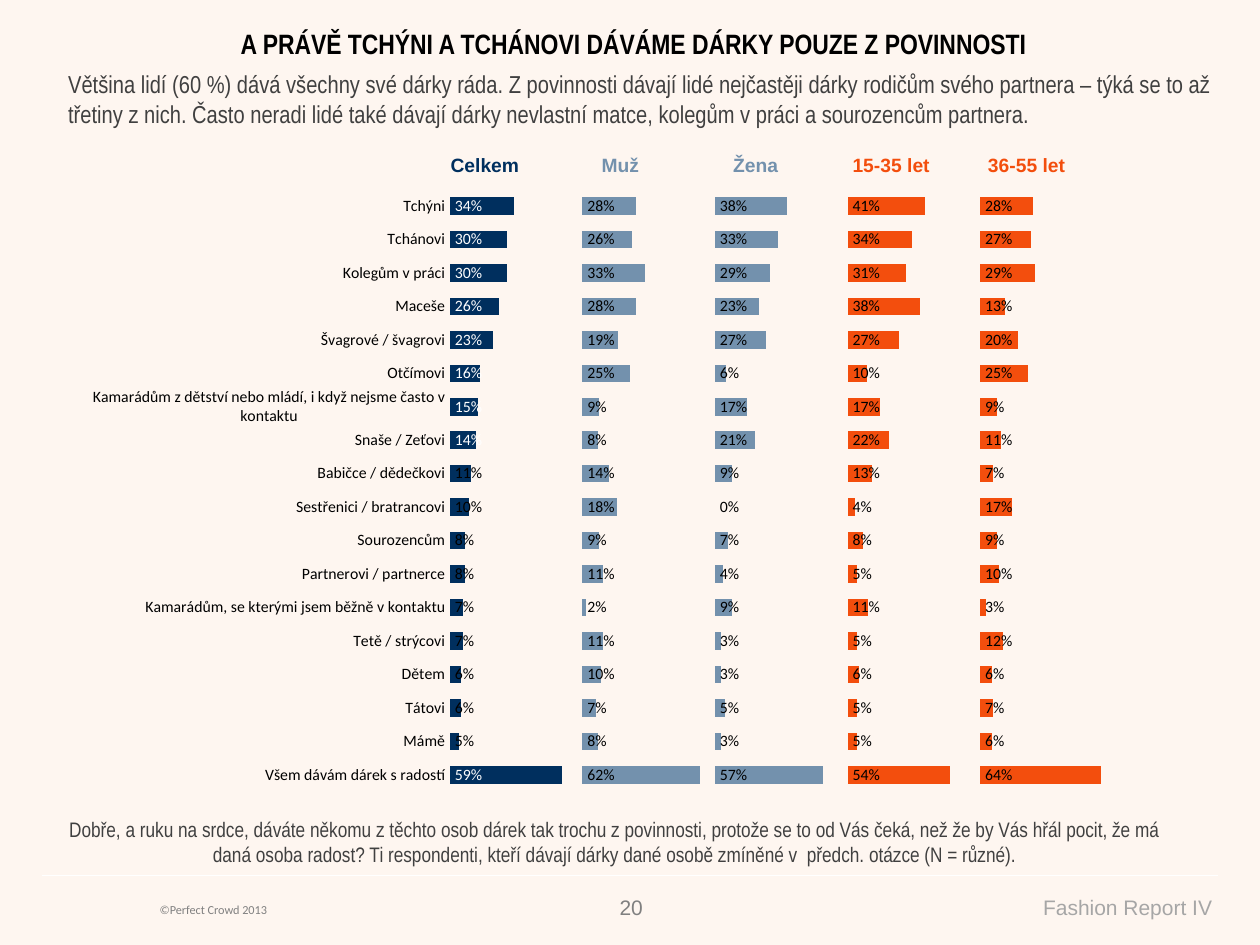
import pptx
import pptx.chart.data
import pptx.dml.color
import pptx.enum.chart
import pptx.enum.shapes
import pptx.enum.text
import pptx.oxml
import pptx.oxml.ns
import pptx.util
from pptx.util import Cm, Pt

ALIGN = pptx.enum.text.PP_ALIGN
ANCHOR = pptx.enum.text.MSO_ANCHOR
NAVY, STEEL, ORANGE = "002F5E", "7391AD", "F34E0D"

# Content
TITLE = "A PRÁVĚ TCHÝNI A TCHÁNOVI DÁVÁME DÁRKY POUZE Z POVINNOSTI"
SUMMARY = (
    "Většina lidí (60 %) dává všechny své dárky ráda. Z povinnosti dávají lidé "
    "nejčastěji dárky rodičům svého partnera – týká se to až třetiny z nich. Často "
    "neradi lidé také dávají dárky nevlastní matce, kolegům v práci a sourozencům partnera."
)
QUESTION = (
    "Dobře, a ruku na srdce, dáváte někomu z těchto osob dárek tak trochu z povinnosti, "
    "protože se to od Vás čeká, než že by Vás hřál pocit, že má daná osoba radost? "
    "Ti respondenti, kteří dávají dárky dané osobě zmíněné v  předch. otázce (N = různé)."
)
RECIPIENTS = [
    "Tchýni", "Tchánovi", "Kolegům v práci", "Maceše", "Švagrové / švagrovi", "Otčímovi",
    "Kamarádům z dětství nebo mládí, i když nejsme často v kontaktu", "Snaše / Zeťovi",
    "Babičce / dědečkovi", "Sestřenici / bratrancovi", "Sourozencům",
    "Partnerovi / partnerce", "Kamarádům, se kterými jsem běžně v kontaktu",
    "Tetě / strýcovi", "Dětem", "Tátovi", "Mámě", "Všem dávám dárek s radostí",
]
GROUPS = [  # heading, colour, percentages
    ("Celkem", NAVY, [34, 30, 30, 26, 23, 16, 15, 14, 11, 10, 8, 8, 7, 7, 6, 6, 5, 59]),
    ("Muž", STEEL, [28, 26, 33, 28, 19, 25, 9, 8, 14, 18, 9, 11, 2, 11, 10, 7, 8, 62]),
    ("Žena", STEEL, [38, 33, 29, 23, 27, 6, 17, 21, 9, 0, 7, 4, 9, 3, 3, 5, 3, 57]),
    ("15-35 let", ORANGE, [41, 34, 31, 38, 27, 10, 17, 22, 13, 4, 8, 5, 11, 5, 6, 5, 5, 54]),
    ("36-55 let", ORANGE, [28, 27, 29, 13, 20, 25, 9, 11, 7, 17, 9, 10, 3, 12, 6, 7, 6, 64]),
]
WHITE_LABELS = [*range(8), 17]  # rows of the first group
COLUMN_PITCH = 70  # percentage points from one group's base to the next
AXIS_MAXIMUM = 4
PLOT_LAYOUT = {"x": 0.332, "y": 0.069, "w": 0.663, "h": 0.889}

FOOTER = [  # text, box in cm, format, alignment
    ("©Perfect Crowd 2013", (2.97, 18.06, 7.39, 0.56),
     {"size": Pt(7), "name": "Calibri"}, "808080", ALIGN.LEFT),
    ("Fashion Report IV", (15.27, 17.91, 9.42, 0.76),
     {"size": Pt(12), "name": "Arial"}, "A6A6A6", ALIGN.RIGHT),
    ("20", (12.17, 17.91, 1.04, 0.76),
     {"size": Pt(12), "name": "Arial"}, "808080", ALIGN.RIGHT),
]


def rgb(code):
    return pptx.dml.color.RGBColor.from_string(code)


def style(font, values, color):
    for name, value in values.items():
        setattr(font, name, value)
    font.color.rgb = rgb(color)


def write(frame, text, values, color, align, anchor=ANCHOR.TOP):
    frame.word_wrap = True
    frame.vertical_anchor = anchor
    para = frame.paragraphs[0]
    para.alignment = align
    para.space_before = Pt(0)
    span = para.add_run()
    span.text = text
    style(span.font, values, color)
    return para


def place(shape, area):
    for name, value in zip(("left", "top", "width", "height"), area):
        setattr(shape, name, Cm(value))


def add_text(page, text, area, values, color, align):
    box = page.shapes.add_textbox(*map(Cm, area))
    write(box.text_frame, text, values, color, align)


def add_headings(page):
    frame = page.shapes.add_table(1, len(GROUPS), Cm(8.41), Cm(3.07), Cm(13.65), Cm(0.56))
    table = frame.table
    table.first_row = table.horz_banding = False
    style_id = table._tbl.tblPr.find(pptx.oxml.ns.qn("a:tableStyleId"))
    style_id.text = "{2D5ABB26-0587-4C30-8999-92F81FD0307C}"
    for cell, (heading, color, _) in zip(table.iter_cells(), GROUPS):
        cell.fill.background()
        for side in ("left", "top", "right", "bottom"):
            setattr(cell, "margin_" + side, 0)
        cell.vertical_anchor = ANCHOR.MIDDLE
        para = cell.text_frame.paragraphs[0]
        para.alignment = ALIGN.CENTER
        span = para.add_run()
        span.text = heading
        style(span.font, {"size": Pt(11), "name": "Arial", "bold": True}, color)


def add_bars(page):
    # Each group is followed by an invisible spacer that fills its column
    data = pptx.chart.data.CategoryChartData(number_format="0%")
    data.categories = RECIPIENTS
    colors = []
    for heading, color, values in GROUPS:
        data.add_series(heading, [value / 100 for value in values])
        colors.append(color)
        if heading != GROUPS[-1][0]:
            data.add_series("Mezera " + heading,
                            [(COLUMN_PITCH - value) / 100 for value in values])
            colors.append(None)
    chart = page.shapes.add_chart(
        pptx.enum.chart.XL_CHART_TYPE.BAR_STACKED,
        Cm(1.42), Cm(2.87), Cm(23.04), Cm(13.67), data).chart
    chart.has_legend = chart.has_title = False
    style(chart.font, {"size": Pt(9), "name": "Calibri"}, "000000")

    # Axes
    category, value = chart.category_axis, chart.value_axis
    category.reverse_order = True
    category.format.line.fill.background()
    category.major_tick_mark = pptx.enum.chart.XL_TICK_MARK.NONE
    value.minimum_scale, value.maximum_scale = 0, AXIS_MAXIMUM
    value.has_major_gridlines = value.visible = False

    # Bars and their labels
    plot = chart.plots[0]
    plot.gap_width, plot.overlap, plot.vary_by_categories = 91, 100, False
    inside_base = pptx.enum.chart.XL_LABEL_POSITION.INSIDE_BASE
    for series, color in zip(plot.series, colors):
        if color is None:
            series.format.fill.background()
            continue
        series.format.fill.solid()
        series.format.fill.fore_color.rgb = rgb(color)
        labels = series.data_labels
        labels.show_value = True
        labels.number_format, labels.number_format_is_linked = "0%", False
        labels.position = inside_base
        style(labels.font, {"size": Pt(9), "name": "Calibri"}, "000000")
    for row in WHITE_LABELS:
        label = plot.series[0].points[row].data_label
        style(label.font, {"size": Pt(9), "name": "Calibri"}, "FFFFFF")
        label.position = inside_base

    # Fixed inner plot area
    area = chart._chartSpace.chart.plotArea
    for old in area.findall(pptx.oxml.ns.qn("c:layout")):
        area.remove(old)
    parts = "".join(f'<c:{key}Mode val="edge"/>' for key in "xy")
    parts += "".join(f'<c:{key} val="{size}"/>' for key, size in PLOT_LAYOUT.items())
    area.insert(0, pptx.oxml.parse_xml(
        f'<c:layout {pptx.oxml.ns.nsdecls("c")}><c:manualLayout>'
        f'<c:layoutTarget val="inner"/>{parts}</c:manualLayout></c:layout>'))


def main():
    deck = pptx.Presentation()
    deck.slide_width, deck.slide_height = Cm(25.4), Cm(19.05)
    page = deck.slides.add_slide(deck.slide_layouts[1])
    page.background.fill.solid()
    page.background.fill.fore_color.rgb = rgb("FEF6F0")

    # Title and summary
    title, body = page.shapes.title, page.placeholders[1]
    place(title, (1.42, 0.41, 22.71, 0.94))
    write(title.text_frame, TITLE, {"size": Pt(16), "name": "Arial Narrow", "bold": True},
          "000000", ALIGN.CENTER, ANCHOR.MIDDLE)
    place(body, (1.12, 1.27, 23.77, 2.26))
    para = write(body.text_frame, SUMMARY, {"size": Pt(14), "name": "Arial Narrow"},
                 "404040", ALIGN.LEFT)
    properties = para._p.get_or_add_pPr()
    properties.set("marL", "0")
    properties.set("indent", "0")
    properties.append(pptx.oxml.parse_xml(f'<a:buNone {pptx.oxml.ns.nsdecls("a")}/>'))
    for shape in (title, body):
        shape.text_frame.auto_size = pptx.enum.text.MSO_AUTO_SIZE.NONE

    # Footer
    rule = page.shapes.add_connector(pptx.enum.shapes.MSO_CONNECTOR.STRAIGHT,
                                     Cm(0.84), Cm(17.65), Cm(24.56), Cm(17.65))
    rule.line.color.rgb = rgb("FFFFFF")
    rule.line.width = Pt(0.75)
    rule._element.spPr.append(
        pptx.oxml.parse_xml(f'<a:effectLst {pptx.oxml.ns.nsdecls("a")}/>'))
    for item in FOOTER:
        add_text(page, *item)

    # Survey question, column headings and bars
    add_text(page, QUESTION, (0.89, 16.33, 23.01, 1.27),
             {"size": Pt(12), "name": "Arial Narrow"}, "404040", ALIGN.CENTER)
    add_headings(page)
    add_bars(page)
    deck.save("out.pptx")


if __name__ == "__main__":
    main()
